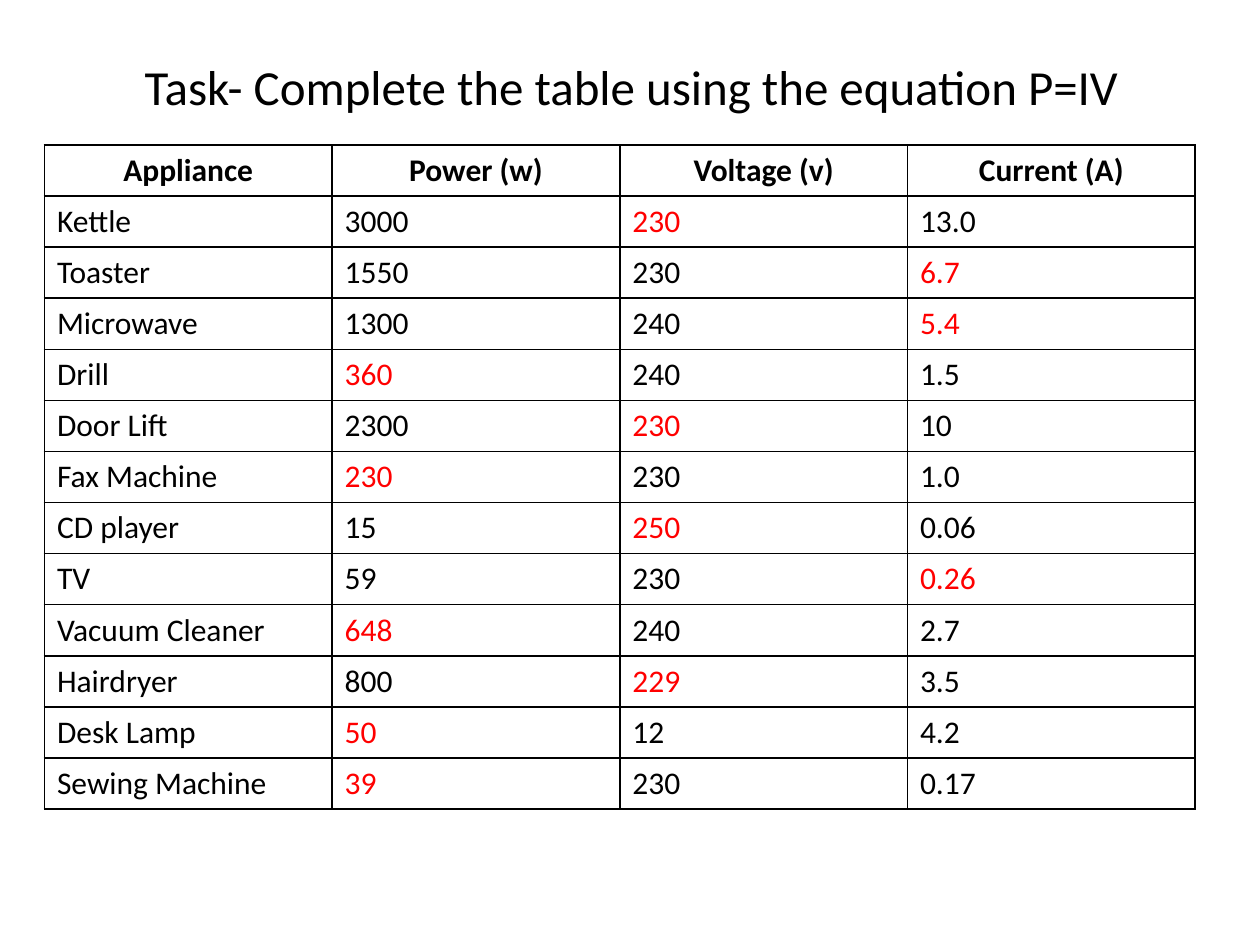
from lxml.etree import SubElement
from pptx import Presentation
from pptx.dml.color import RGBColor
from pptx.enum.text import MSO_ANCHOR, PP_ALIGN
from pptx.oxml.ns import qn
from pptx.util import Pt


def paint(fill, color):
    fill.solid()
    fill.fore_color.rgb = RGBColor.from_string(color)


def write(frame, text, size, color, bold=False, align=PP_ALIGN.LEFT):
    para = frame.paragraphs[0]
    para.alignment = align
    run = para.add_run()
    run.text = text
    run.font.name = "Calibri"
    run.font.size = Pt(size)
    run.font.bold = bold
    paint(run.font.fill, color)


BLACK, WHITE, RED = "000000", "FFFFFF", "FF0000"
HEAD = ["Appliance", "Power (w)", "Voltage (v)", "Current (A)"]
ITEMS = [
    (["Kettle", "3000", "230", "13.0"], 2),
    (["Toaster", "1550", "230", "6.7"], 3),
    (["Microwave", "1300", "240", "5.4"], 3),
    (["Drill", "360", "240", "1.5"], 1),
    (["Door Lift", "2300", "230", "10"], 2),
    (["Fax Machine", "230", "230", "1.0"], 1),
    (["CD player", "15", "250", "0.06"], 2),
    (["TV", "59", "230", "0.26"], 3),
    (["Vacuum Cleaner", "648", "240", "2.7"], 1),
    (["Hairdryer", "800", "229", "3.5"], 2),
    (["Desk Lamp", "50", "12", "4.2"], 1),
    (["Sewing Machine", "39", "230", "0.17"], 1),
]
ROWS = [(HEAD, None)] + ITEMS
WIDE, HIGH = 164.4, 29.2

deck = Presentation()
deck.slide_width, deck.slide_height = Pt(720), Pt(540)
slide = deck.slides.add_slide(deck.slide_layouts[6])
paint(slide.background.fill, WHITE)

title = slide.shapes.add_textbox(Pt(36.7), Pt(15), Pt(648), Pt(68.4)).text_frame
title.word_wrap = True
title.vertical_anchor = MSO_ANCHOR.MIDDLE
write(title, "Task- Complete the table using the equation P=IV", 28, BLACK,
      align=PP_ALIGN.CENTER)

table = slide.shapes.add_table(
    len(ROWS), len(HEAD), Pt(25.4), Pt(82.8),
    Pt(WIDE * len(HEAD)), Pt(HIGH * len(ROWS))).table
table.horz_banding = False
for col in table.columns:
    col.width = Pt(WIDE)
for r, (texts, answer) in enumerate(ROWS):
    table.rows[r].height = Pt(HIGH)
    for c, text in enumerate(texts):
        cell = table.cell(r, c)
        props = cell._tc.get_or_add_tcPr()
        for side in ("lnL", "lnR", "lnT", "lnB"):
            line = SubElement(props, qn("a:" + side), w=str(Pt(1)))
            ink = SubElement(line, qn("a:solidFill"))
            SubElement(ink, qn("a:srgbClr"), val=BLACK)
        paint(cell.fill, WHITE)
        write(cell.text_frame, text, 18, RED if c == answer else BLACK,
              r == 0, PP_ALIGN.LEFT if r else PP_ALIGN.CENTER)

deck.save("out.pptx")
